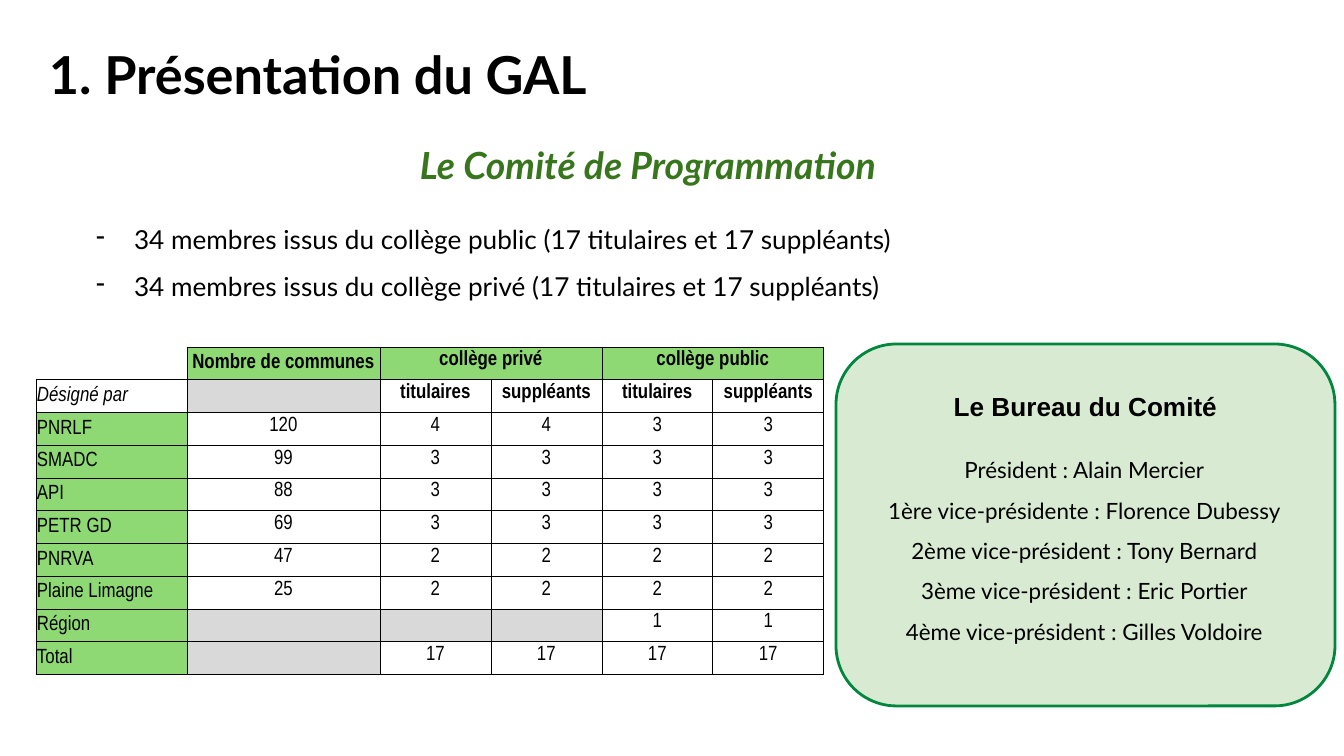
"""Build the slide presenting the programming committee and its bureau."""
import pptx
import pptx.dml.color
import pptx.enum.shapes
import pptx.enum.text
import pptx.oxml
import pptx.oxml.ns
import pptx.util

SCALE = 914400 / 134.4
BLACK, WHITE, GREEN, GREY = "000000", "FFFFFF", "8ED973", "D9D9D9"
ALIGN = pptx.enum.text.PP_ALIGN
ANCHOR = pptx.enum.text.MSO_ANCHOR

HEADING = "1. Présentation du GAL"
SUBTITLE = "Le Comité de Programmation"
MEMBERS = [
    "34 membres issus du collège public (17 titulaires et 17 suppléants)",
    "34 membres issus du collège privé (17 titulaires et 17 suppléants)",
]
BUREAU_TITLE = "Le Bureau du Comité"
BUREAU = [
    "Président : Alain Mercier",
    "1ère vice-présidente : Florence Dubessy",
    "2ème vice-président : Tony Bernard",
    "3ème vice-président : Eric Portier",
    "4ème vice-président : Gilles Voldoire",
]
SEATS = [
    ["", "Nombre de communes", "collège privé", "", "collège public", ""],
    ["Désigné par", "", "titulaires", "suppléants", "titulaires", "suppléants"],
    ["PNRLF", "120", "4", "4", "3", "3"],
    ["SMADC", "99", "3", "3", "3", "3"],
    ["API", "88", "3", "3", "3", "3"],
    ["PETR GD", "69", "3", "3", "3", "3"],
    ["PNRVA", "47", "2", "2", "2", "2"],
    ["Plaine Limagne", "25", "2", "2", "2", "2"],
    ["Région", "", "", "", "1", "1"],
    ["Total", "", "17", "17", "17", "17"],
]
COLUMNS = [151, 193, 111, 111, 111, 111]
TABLE_LEFT, TABLE_TOP, TABLE_HEIGHT = 36, 347, 328


def px(length):
    return pptx.util.Emu(round(length * SCALE))


def color(code):
    return pptx.dml.color.RGBColor.from_string(code)


def set_insets(target, insets):
    for side, inset in zip(("left", "top", "right", "bottom"), insets):
        setattr(target, "margin_" + side, px(inset))


def write(frame, lines, size, font="Lato", code=BLACK, bold=False, italic=False,
          align=ALIGN.LEFT, spacing=1.0):
    for index, line in enumerate(lines):
        para = frame.paragraphs[0] if index == 0 else frame.add_paragraph()
        para.alignment = align
        para.line_spacing = spacing
        para.font.size = pptx.util.Pt(size)
        if not line:
            continue
        span = para.add_run()
        span.text = line
        span.font.size = pptx.util.Pt(size)
        span.font.name = font
        span.font.bold = bold
        span.font.italic = italic
        span.font.color.rgb = color(code)


def add_text(page, place, insets, lines, size, anchor=ANCHOR.TOP, **style):
    frame = page.shapes.add_textbox(*map(px, place)).text_frame
    frame.word_wrap = True
    frame.vertical_anchor = anchor
    set_insets(frame, insets)
    write(frame, lines, size, **style)
    return frame


def add_dashes(frame):
    for para in frame.paragraphs:
        properties = para._p.get_or_add_pPr()
        properties.set("marL", str(px(51)))
        properties.set("indent", str(px(-38)))
        bullet = pptx.oxml.parse_xml(
            f'<a:buChar {pptx.oxml.ns.nsdecls("a")} char="-"/>')
        properties.append(bullet)


def add_bureau_box(page):
    box = page.shapes.add_shape(
        pptx.enum.shapes.MSO_SHAPE.ROUNDED_RECTANGLE, *map(px, (836, 344, 499, 362)))
    box.shadow.inherit = False
    box.adjustments[0] = 0.167
    box.fill.solid()
    box.fill.fore_color.rgb = color("D9EAD3")
    box.line.color.rgb = color("00863D")
    box.line.width = pptx.util.Pt(1.5)
    box.text_frame.word_wrap = True
    box.text_frame.vertical_anchor = ANCHOR.TOP
    set_insets(box.text_frame, (13, 24, 13, 13))
    write(box.text_frame, [BUREAU_TITLE], 14, "Arial", bold=True,
          align=ALIGN.CENTER, spacing=1.15)


def set_borders(cell, corner):
    properties = cell._tc.get_or_add_tcPr()
    for index, side in enumerate("LRTB"):
        code, points = (WHITE, 1) if corner and side in "LT" else (BLACK, 0.4)
        properties.insert(index, pptx.oxml.parse_xml(
            f'<a:ln{side} {pptx.oxml.ns.nsdecls("a")} w="{pptx.util.Pt(points)}">'
            f'<a:solidFill><a:srgbClr val="{code}"/></a:solidFill></a:ln{side}>'))


def cell_fill(row, column, text):
    if row == column == 0:
        return None
    if row == 0 or (column == 0 and row > 1):
        return GREEN
    return None if text else GREY


def add_seats_table(page):
    frame = page.shapes.add_table(
        len(SEATS), len(COLUMNS), px(TABLE_LEFT), px(TABLE_TOP),
        px(sum(COLUMNS)), px(TABLE_HEIGHT))
    table = frame.table
    table.first_row = table.horz_banding = False
    for column, width in zip(table.columns, COLUMNS):
        column.width = px(width)
    for row, texts in enumerate(SEATS):
        table.rows[row].height = px(TABLE_HEIGHT / len(SEATS))
        for column, text in enumerate(texts):
            cell = table.cell(row, column)
            label = column == 0
            set_insets(cell, (1, 1, 1, 7))
            low = label or (row == 0 and column == 1)
            cell.vertical_anchor = ANCHOR.BOTTOM if low else ANCHOR.MIDDLE
            write(cell.text_frame, [text], 11, "Arial Narrow",
                  bold=row < 2 and not label, italic=row == 1 and label,
                  align=ALIGN.LEFT if label else ALIGN.CENTER)
            code = cell_fill(row, column, text)
            if code:
                cell.fill.solid()
                cell.fill.fore_color.rgb = color(code)
            else:
                cell.fill.background()
            set_borders(cell, row == column == 0)
    for column in (2, 4):
        table.cell(0, column).merge(table.cell(0, column + 1))


def main():
    deck = pptx.Presentation()
    deck.slide_width, deck.slide_height = px(1344), px(756)
    page = deck.slides.add_slide(deck.slide_layouts[6])
    add_text(page, (366, 136, 564, 62), (9, 5, 9, 5), [SUBTITLE], 20, ANCHOR.MIDDLE,
             code="38761D", bold=True, italic=True, align=ALIGN.CENTER, spacing=0.9)
    add_bureau_box(page)
    members = add_text(page, (70, 195, 1085, 141), (13, 13, 13, 13), MEMBERS, 14,
                       spacing=1.5)
    members.paragraphs[0].space_before = pptx.util.Pt(10)
    add_dashes(members)
    add_text(page, (836, 430, 497, 231), (13, 13, 13, 13), BUREAU, 12,
             align=ALIGN.CENTER, spacing=1.5)
    add_text(page, (36, 35, 703, 77), (13, 7, 13, 7), [HEADING], 28, bold=True)
    add_seats_table(page)
    deck.save("out.pptx")


if __name__ == "__main__":
    main()
